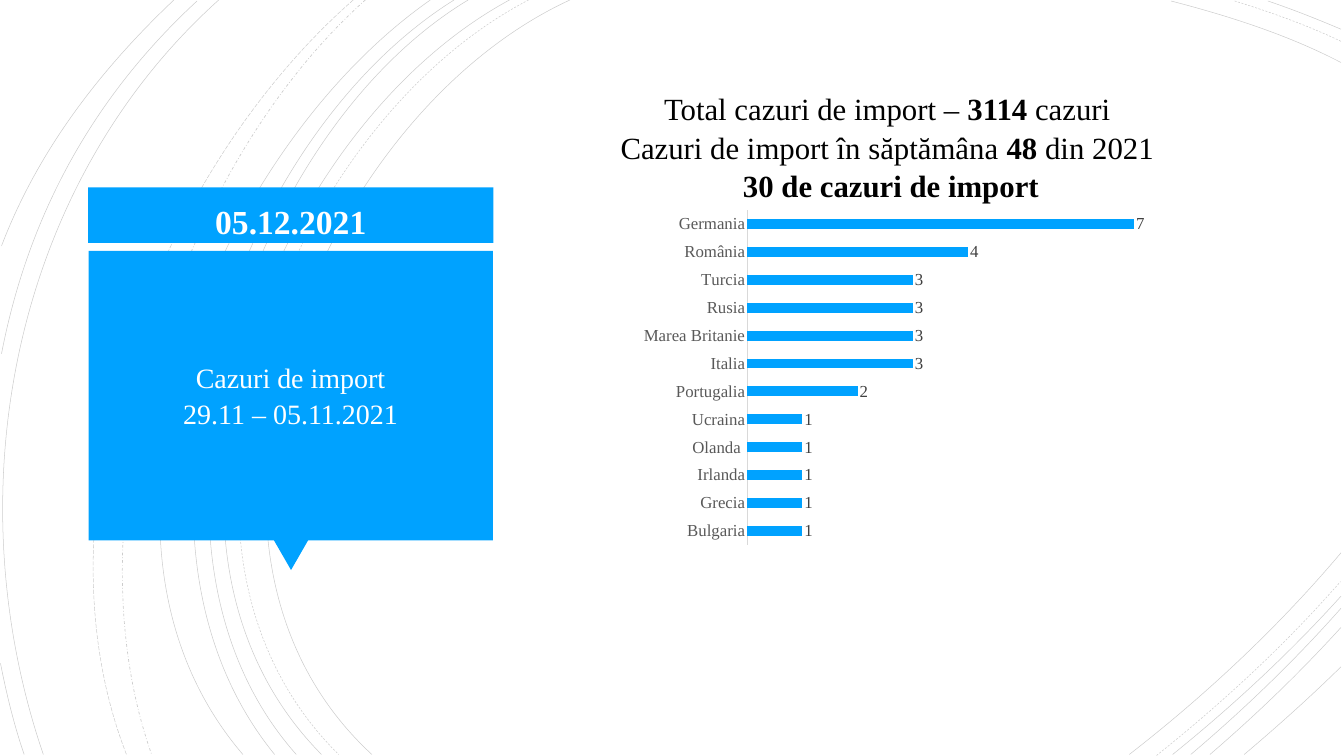
"""Build the slide on weekly import cases: arcs, callout and bar chart."""
from lxml import etree
from pptx import Presentation
from pptx.chart.data import CategoryChartData
from pptx.dml.color import RGBColor
from pptx.enum.chart import XL_CHART_TYPE, XL_LABEL_POSITION, XL_TICK_MARK
from pptx.enum.dml import MSO_LINE
from pptx.enum.shapes import MSO_SHAPE
from pptx.enum.text import MSO_ANCHOR, MSO_AUTO_SIZE, PP_ALIGN
from pptx.oxml.ns import qn
from pptx.util import Inches, Pt

BAR = XL_CHART_TYPE.BAR_CLUSTERED
OUTSIDE_END = XL_LABEL_POSITION.OUTSIDE_END
NO_TICK = XL_TICK_MARK.NONE
SOLID, DASH, LONG_DASH, DASH_DOT = (
    MSO_LINE.SOLID, MSO_LINE.DASH, MSO_LINE.LONG_DASH, MSO_LINE.DASH_DOT)
RECTANGLE, TRIANGLE = MSO_SHAPE.RECTANGLE, MSO_SHAPE.ISOSCELES_TRIANGLE
TOP, MIDDLE = MSO_ANCHOR.TOP, MSO_ANCHOR.MIDDLE
GROW, FIXED = MSO_AUTO_SIZE.SHAPE_TO_FIT_TEXT, MSO_AUTO_SIZE.NONE
CENTER = PP_ALIGN.CENTER

BLACK = RGBColor(0x00, 0x00, 0x00)
WHITE = RGBColor(0xFF, 0xFF, 0xFF)
RED = RGBColor(0xFF, 0x00, 0x00)
BLUE = RGBColor(0x00, 0xA2, 0xFF)
LABEL_GREY = RGBColor(0x40, 0x40, 0x40)
AXIS_GREY = RGBColor(0x59, 0x59, 0x59)
LINE_GREY = RGBColor(0xD9, 0xD9, 0xD9)
FONT = "Times New Roman"

COLUMNS, ROWS = 26.67, 15
deck = Presentation()
deck.slide_width, deck.slide_height = Inches(COLUMNS), Inches(ROWS)
COLUMN, ROW = deck.slide_width / COLUMNS, deck.slide_height / ROWS
page = deck.slides.add_slide(deck.slide_layouts[6])


def cells(left, top, width, height):
    return (round(left * COLUMN), round(top * ROW),
            round(width * COLUMN), round(height * ROW))


def add_text(text, area, size, color=WHITE, bold=False, anchor=TOP,
             fit=GROW, inset=(0.1, 0.05)):
    """Write paragraphs of lines, each line a list of (words, bold, color)."""
    box = page.shapes.add_textbox(*cells(*area))
    frame = box.text_frame
    frame.word_wrap, frame.auto_size, frame.vertical_anchor = True, fit, anchor
    frame.margin_left = frame.margin_right = round(inset[0] * COLUMN)
    frame.margin_top = frame.margin_bottom = round(inset[1] * ROW)
    for index, line in enumerate(text):
        para = frame.add_paragraph() if index else frame.paragraphs[0]
        para.alignment, para.line_spacing = CENTER, 1.05
        spans = [(line, bold, color)] if isinstance(line, str) else line
        for words, heavy, tint in spans:
            for part_index, part in enumerate(words.split("\n")):
                if part_index:
                    para.add_line_break()
                span = para.add_run()
                span.text = part
                span.font.name, span.font.size = FONT, Pt(size)
                span.font.bold, span.font.color.rgb = heavy, tint


ARCS = [
    (SOLID, [
        [(11.31, 0), (6.3, 2.3), (2.86, 10.8), (7.38, 14.97)],
        [(10.11, 0), (5.39, 2.55), (2.19, 10.74), (6.38, 14.97)],
        [(9.29, 0), (4.87, 2.66), (2.19, 10.82), (5.88, 14.97)],
        [(9.01, 0), (4.61, 2.75), (1.94, 10.67), (5.45, 14.97)],
        [(8.54, 0), (4.34, 2.93), (1.06, 10.58), (4.82, 14.97)],
        [(4.34, 0), (0.22, 3.7), (-0.91, 9.8), (0.86, 14.97)],
        [(3.91, 0.02), (1.85, 1.92), (0.56, 4.27), (0.03, 7.02)],
        [(3.45, 0), (1.99, 1.38), (0.75, 2.99), (0.03, 4.88)],
        [(0.01, 13.16), (0.13, 13.77), (0.28, 14.39), (0.48, 14.97)],
        [(26.61, 1.24), (25.56, 0.69), (24.36, 0.31), (23.24, 0.02)],
        [(26.61, 0.58), (26.14, 0.38), (25.66, 0.19), (25.16, 0.02)],
        [(22.41, 14.97), (23.93, 13.79), (25.37, 12.44), (26.61, 10.97)],
        [(23.27, 14.97), (24.46, 14.01), (25.59, 12.96), (26.61, 11.83)],
        [(23.63, 14.97), (24.68, 14.08), (25.69, 13.11), (26.61, 12.07)],
        [(24.01, 14.97), (24.93, 14.18), (25.8, 13.34), (26.61, 12.45)],
        [(24.69, 14.97), (25.34, 14.42), (25.99, 13.84), (26.61, 13.23)],
    ]),
    (DASH, [
        [(10.49, 0), (5.69, 2.49), (2.45, 10.75), (6.72, 14.97)],
        [(26.61, 0.82), (25.94, 0.5), (25.21, 0.24), (24.5, 0.02)],
        [(22.95, 14.99), (24.25, 13.95), (25.5, 12.8), (26.6, 11.54)],
    ]),
    (DASH_DOT, [[(7.25, 0), (3.52, 3.33), (1.31, 10.18), (3.01, 14.97)]]),
    (LONG_DASH, [[(7.01, 0), (3.15, 3.38), (0.57, 9.98), (2.51, 14.97)]]),
]
arc_group = page.shapes.add_group_shape()
for dash, arcs in ARCS:
    for start, *controls in arcs:
        builder = arc_group.shapes.build_freeform(
            round(start[0] * COLUMN), round(start[1] * ROW))
        builder.add_line_segments(
            [(round(x * COLUMN), round(y * ROW)) for x, y in controls], close=False)
        arc = builder.convert_to_shape()
        arc.shadow.inherit = False
        arc.fill.background()
        arc.line.color.rgb = BLACK
        arc.line.width = Pt(1 if dash == DASH_DOT else 0.75)
        arc.line.dash_style = dash
        tint = arc.line._ln.find(".//" + qn("a:srgbClr"))
        etree.SubElement(tint, qn("a:alpha"), val="20000")
        outline = arc._element.find(".//" + qn("a:path"))
        curve = etree.SubElement(outline, qn("a:cubicBezTo"))
        for segment in outline.findall(qn("a:lnTo")):
            curve.append(segment[0])
            outline.remove(segment)

callout = page.shapes.add_group_shape()
for kind, area, turn in [
    (RECTANGLE, (1.75, 3.72, 8.04, 1.1), 0),
    (TRIANGLE, (5.43, 10.71, 0.69, 0.6), 180),
    (RECTANGLE, (1.76, 4.98, 8.02, 5.74), 0),
]:
    panel = callout.shapes.add_shape(kind, *cells(*area))
    panel.rotation = turn
    panel.shadow.inherit = False
    panel.fill.solid()
    panel.fill.fore_color.rgb = BLUE
    panel.line.fill.background()

add_text(["Cazuri de import\n29.11 – 05.11.2021"], (1.94, 5.14, 7.65, 5.37), 40,
         anchor=MIDDLE, fit=FIXED, inset=(0.06, 0.06))
add_text([
    [("Total cazuri de import – ", False, BLACK), ("3114 ", True, BLACK),
     ("cazuri", False, BLACK)],
    [("Cazuri de import în săptămâna ", False, BLACK), ("48 ", True, BLACK),
     ("din 2021", False, BLACK)],
    [(" ", True, RED), ("30 de cazuri de import", True, BLACK)],
], (11.6, 1.69, 12.01, 2.32), 44)
add_text(["05.12.2021"], (3.22, 3.9, 5.1, 0.91), 48, bold=True)

cases = CategoryChartData()
cases.categories = ["Bulgaria", "Grecia", "Irlanda", "Olanda ", "Ucraina", "Portugalia",
                    "Italia", "Marea Britanie", "Rusia", "Turcia", "România", "Germania"]
cases.add_series("Series 1", [1, 1, 1, 1, 1, 2, 3, 3, 3, 3, 4, 7])
chart = page.shapes.add_chart(BAR, *cells(12.55, 4.03, 11.28, 6.92), cases).chart
chart.has_legend = chart.has_title = False

countries, counts = chart.category_axis, chart.value_axis
countries.major_tick_mark = countries.minor_tick_mark = NO_TICK
countries.has_major_gridlines = counts.has_major_gridlines = False
countries.format.line.color.rgb = LINE_GREY
countries.format.line.width = Pt(0.75)
counts.visible = False
counts.minimum_scale, counts.maximum_scale = 0, 8

plot = chart.plots[0]
plot.gap_width, plot.vary_by_categories = 182, False
bars = plot.series[0]
bars.format.fill.solid()
bars.format.fill.fore_color.rgb = BLUE
labels = bars.data_labels
labels.show_value, labels.position = True, OUTSIDE_END
for font, color in [(chart.font, BLACK), (countries.tick_labels.font, AXIS_GREY),
                    (labels.font, LABEL_GREY)]:
    font.name, font.size, font.color.rgb = FONT, Pt(24), color

deck.save("out.pptx")
